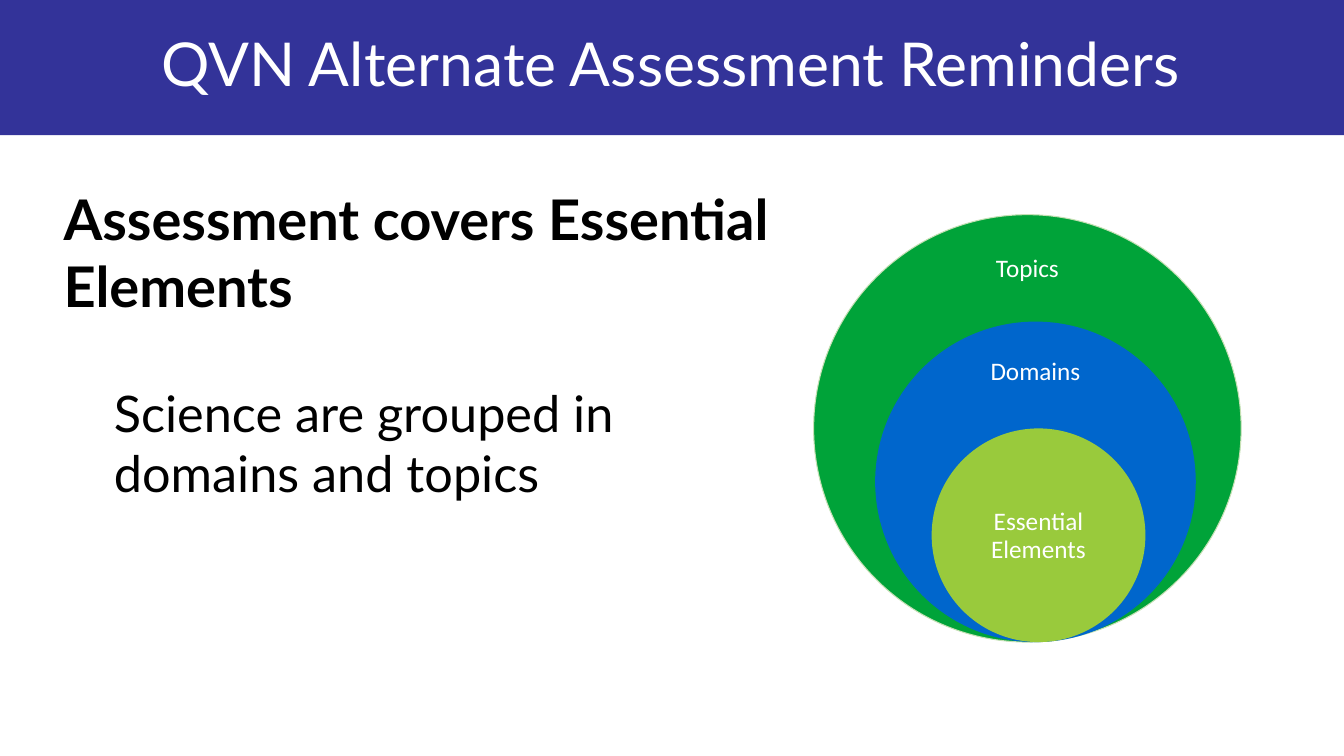
from dataclasses import dataclass

from lxml.etree import SubElement
from pptx import Presentation
from pptx.dml.color import RGBColor
from pptx.enum.shapes import MSO_SHAPE
from pptx.enum.text import MSO_ANCHOR, MSO_AUTO_SIZE, PP_ALIGN
from pptx.oxml.ns import qn
from pptx.util import Inches, Pt


@dataclass(frozen=True)
class Theme:
    """Colours, fonts and type sizes of the slide."""

    banner: str = "333399"
    white: str = "FFFFFF"
    black: str = "000000"
    topics: str = "00A339"
    topics_edge: str = "C5E0B4"
    domains: str = "0066CC"
    elements: str = "99CA3C"
    main_font: str = "Lato"
    label_font: str = "Calibri"
    title_size: float = 43.2
    heading_size: float = 40
    detail_size: float = 36
    label_size: float = 18


THEME = Theme()
CIRCLES_BOTTOM = 6.37
OUTER_DIAMETER = 4.24


def apply_format(target, values):
    """Set each named attribute on the target."""
    for name, value in values.items():
        setattr(target, name, value)


def place(shape, left, top, width, height):
    """Move and size a shape, in inches."""
    lengths = dict(left=left, top=top, width=width, height=height)
    apply_format(shape, {name: Inches(value) for name, value in lengths.items()})


def write_paragraph(paragraph, text, font_values, color, **paragraph_values):
    """Write one formatted run into a paragraph."""
    apply_format(paragraph, paragraph_values)
    run = paragraph.add_run()
    run.text = text
    apply_format(run.font, font_values)
    run.font.color.rgb = RGBColor.from_string(color)


def remove_bullet(paragraph, margin):
    """Give a paragraph a plain left margin without a bullet."""
    properties = paragraph._p.get_or_add_pPr()
    properties.set("marL", str(Inches(margin)))
    properties.set("indent", "0")
    SubElement(properties, qn("a:buNone"))


def add_filled_shape(shapes, kind, box, fill, edge=None):
    """Add a flat shape with an optional thin outline."""
    shape = shapes.add_shape(kind, *map(Inches, box))
    shape.shadow.inherit = False
    shape.fill.solid()
    shape.fill.fore_color.rgb = RGBColor.from_string(fill)
    if edge:
        shape.line.color.rgb = RGBColor.from_string(edge)
        shape.line.width = Pt(0.75)
    else:
        shape.line.fill.background()
    return shape


def add_title(slide):
    """Fill the title and lay the banner behind it."""
    title = slide.shapes.title
    banner = add_filled_shape(
        slide.shapes, MSO_SHAPE.RECTANGLE, (-0.01, 0, 13.34, 1.34), THEME.banner
    )
    title.element.addprevious(banner.element)
    place(title, 0.9, 0, 11.5, 1.33)
    apply_format(
        title.text_frame,
        dict(vertical_anchor=MSO_ANCHOR.MIDDLE, auto_size=MSO_AUTO_SIZE.NONE),
    )
    write_paragraph(
        title.text_frame.paragraphs[0],
        "QVN Alternate Assessment Reminders",
        dict(name=THEME.main_font, size=Pt(THEME.title_size)),
        THEME.white,
        alignment=PP_ALIGN.CENTER,
        line_spacing=0.9,
    )


def add_body(slide):
    """Fill the body with a heading and its detail."""
    body = slide.placeholders[1]
    place(body, 0.53, 1.78, 7.54, 4.95)
    frame = body.text_frame
    frame.auto_size = MSO_AUTO_SIZE.NONE
    rows = (
        ("Assessment covers Essential Elements", THEME.heading_size, True, 0, 0, 40),
        ("Science are grouped in domains and topics", THEME.detail_size, False, 1, 5, 0),
    )
    for text, size, bold, level, before, after in rows:
        paragraph = frame.add_paragraph() if level else frame.paragraphs[0]
        write_paragraph(
            paragraph,
            text,
            dict(name=THEME.main_font, size=Pt(size), bold=bold),
            THEME.black,
            level=level,
            space_before=Pt(before),
            space_after=Pt(after),
        )
        remove_bullet(paragraph, 0.5 * level)


def add_label(shapes, text, box):
    """Add a centred white label."""
    frame = shapes.add_textbox(*map(Inches, box)).text_frame
    sides = ("left", "top", "right", "bottom")
    apply_format(frame, {f"margin_{side}": Inches(0.14) for side in sides})
    apply_format(frame, dict(word_wrap=True, vertical_anchor=MSO_ANCHOR.MIDDLE))
    write_paragraph(
        frame.paragraphs[0],
        text,
        dict(name=THEME.label_font, size=Pt(THEME.label_size)),
        THEME.white,
        alignment=PP_ALIGN.CENTER,
        line_spacing=0.9,
    )


def add_nested_circles(slide):
    """Add labelled circles that share one bottom edge."""
    shapes = slide.shapes.add_group_shape().shapes
    circles = (
        ("Topics", 8.07, 1, THEME.topics, THEME.topics_edge, (9.45, 2.35, 1.48, 0.64)),
        ("Domains", 8.68, 0.75, THEME.domains, None, (9.53, 3.39, 1.48, 0.6)),
        ("Essential Elements", 9.24, 0.5, THEME.elements, None, (9.55, 4.79, 1.5, 1.06)),
    )
    for text, left, scale, fill, edge, label_box in circles:
        diameter = OUTER_DIAMETER * scale
        circle_box = (left, CIRCLES_BOTTOM - diameter, diameter, diameter)
        add_filled_shape(shapes, MSO_SHAPE.OVAL, circle_box, fill, edge)
        add_label(shapes, text, label_box)


def main():
    """Build and save the slide."""
    presentation = Presentation()
    apply_format(
        presentation, dict(slide_width=Inches(13.33), slide_height=Inches(7.5))
    )
    slide = presentation.slides.add_slide(presentation.slide_layouts[1])
    add_title(slide)
    add_body(slide)
    add_nested_circles(slide)
    presentation.save("out.pptx")


if __name__ == "__main__":
    main()
